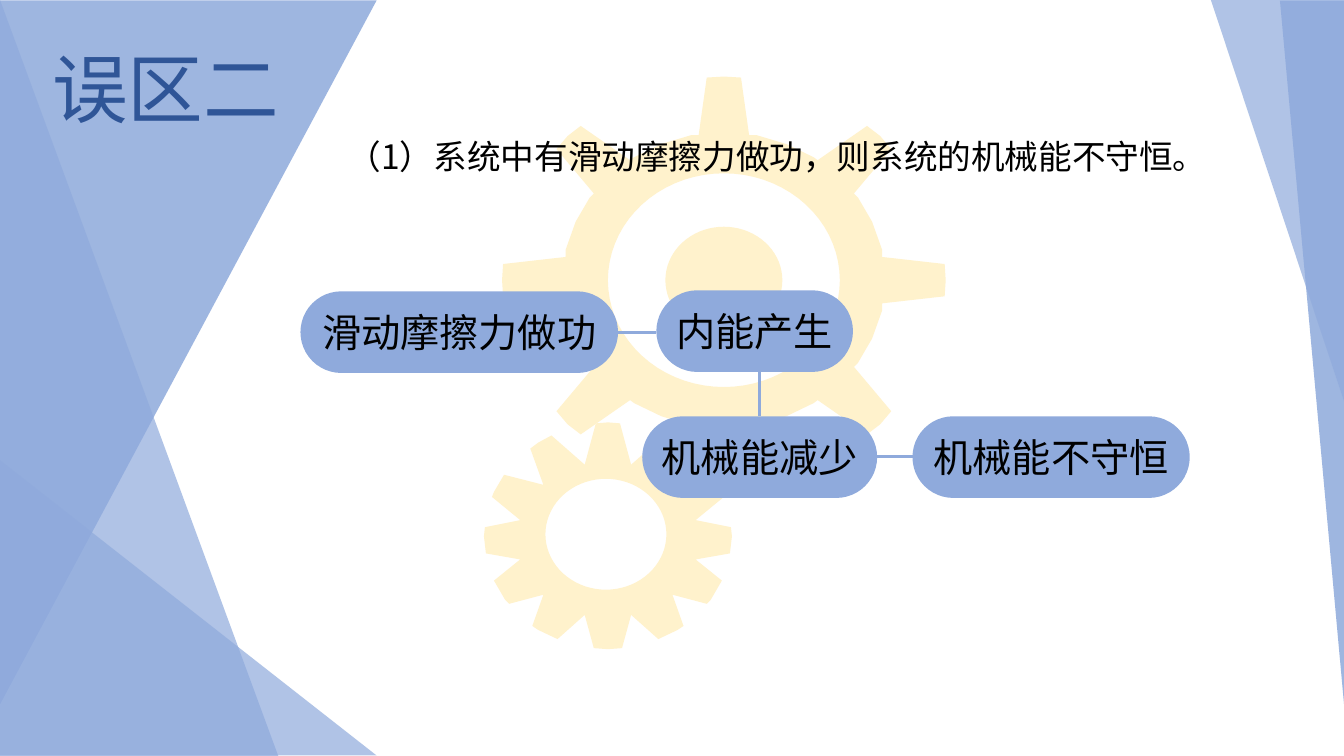
from dataclasses import dataclass
from math import cos, pi, sin

from lxml.etree import SubElement
from pptx import Presentation
from pptx.dml.color import RGBColor
from pptx.enum.shapes import MSO_CONNECTOR, MSO_SHAPE
from pptx.enum.text import MSO_ANCHOR, PP_ALIGN
from pptx.oxml.ns import qn
from pptx.util import Inches, Pt

COLORS = {"gear": "FFF2CC", "blue": "8FAADC", "title": "2F5597", "ink": "000000"}
FONT = "Noto Sans CJK SC"
Point = tuple[float, float]


@dataclass(frozen=True)
class Facet:
    left: float
    top: float
    width: float
    height: float
    rotation: int
    apex: float
    opacity: int


@dataclass(frozen=True)
class Caption:
    text: str
    left: float
    top: float
    width: float
    height: float
    size: int
    color: str
    spacing: float


@dataclass(frozen=True)
class Step:
    text: str
    left: float
    top: float
    width: float


@dataclass(frozen=True)
class Link:
    start: Point
    end: Point


FACETS = [
    Facet(-1.66, 1.64, 7.03, 3.76, 90, 0, 86),
    Facet(-2.37, 2.37, 7.5, 2.76, 90, 1, 70),
    Facet(0.39, 4.15, 2.94, 3.75, 90, 1, 70),
    Facet(9.5, 3.2, 7.03, 0.64, 270, 1, 86),
    Facet(10.68, 1.33, 3.98, 1.32, 270, 1, 70),
]
CAPTIONS = [
    Caption("误区二", 0.42, 0.37, 3.54, 1.01, 54, "title", 1.0),
    Caption("（1）系统中有滑动摩擦力做功，则系统的机械能不守恒。",
            3.35, 1.1, 8.75, 0.64, 24, "ink", 1.5),
]
STEP_HEIGHT = 0.81
STEPS = [
    Step("滑动摩擦力做功", 2.98, 2.89, 3.15),
    Step("内能产生", 6.51, 2.88, 1.95),
    Step("机械能减少", 6.37, 4.13, 2.33),
    Step("机械能不守恒", 9.05, 4.13, 2.75),
]
LINKS = [
    Link((6.11, 3.3), (6.51, 3.3)),
    Link((7.53, 3.69), (7.53, 4.13)),
    Link((8.67, 4.53), (9.06, 4.53)),
]

SMALL_CENTER = (6.03, 5.32)
SMALL_HOLE_CENTER = (6.01, 5.3)
SMALL_HALF = [
    (0, -1.13), (0.12, -1.12), (0.23, -0.71), (0.56, -1), (0.69, -0.93),
    (0.77, -0.87), (0.64, -0.51), (1.03, -0.61), (1.13, -0.44), (1.15, -0.39),
    (0.87, -0.16), (1.22, -0.09), (1.23, 0), (1.21, 0.17), (0.87, 0.23),
    (1.13, 0.44), (1.02, 0.63), (0.98, 0.67), (0.64, 0.58), (0.75, 0.89),
    (0.69, 0.93), (0.5, 1.02), (0.23, 0.78), (0.14, 1.11), (0, 1.12),
]
LARGE_CENTER = (7.18, 2.78)
LARGE_QUARTER = [
    (0, -2.02), (0.17, -2.01), (0.25, -1.44), (0.32, -1.44), (0.62, -1.35),
    (0.89, -1.22), (0.93, -1.19), (1.42, -1.53), (1.55, -1.43), (1.66, -1.3),
    (1.29, -0.86), (1.33, -0.82), (1.47, -0.58), (1.57, -0.3), (1.57, -0.23),
    (2.19, -0.16), (2.2, 0),
]


def mirror_left(half: list[Point]) -> list[Point]:
    return half + [(-x, y) for x, y in half[-2:0:-1]]


def mirror_down(quarter: list[Point]) -> list[Point]:
    return quarter + [(x, -y) for x, y in quarter[-2::-1]]


def place(center: Point, offsets: list[Point]) -> list[Point]:
    return [(center[0] + x, center[1] + y) for x, y in offsets]


def ellipse(center: Point, radius_x: float, radius_y: float) -> list[Point]:
    angles = [2 * pi * step / 72 for step in range(72)]
    return place(center, [(radius_x * cos(a), radius_y * sin(a)) for a in angles])


def paint(shape, color: str) -> None:
    shape.shadow.inherit = False
    shape.fill.solid()
    shape.fill.fore_color.rgb = RGBColor.from_string(COLORS[color])
    shape.line.fill.background()


def add_gear(slide, contours: list[list[Point]]) -> None:
    outlines = [[(Inches(x), Inches(y)) for x, y in contour] for contour in contours]
    builder = slide.shapes.build_freeform(*outlines[0][0])
    builder.add_line_segments(outlines[0][1:], close=True)
    for outline in outlines[1:]:
        builder.move_to(*outline[0])
        builder.add_line_segments(outline[1:], close=True)
    paint(builder.convert_to_shape(), "gear")


def add_facet(slide, facet: Facet) -> None:
    triangle = slide.shapes.add_shape(
        MSO_SHAPE.ISOSCELES_TRIANGLE, Inches(facet.left), Inches(facet.top),
        Inches(facet.width), Inches(facet.height))
    triangle.adjustments[0] = facet.apex
    triangle.rotation = facet.rotation
    paint(triangle, "blue")
    tint = triangle.fill._xPr.find(qn("a:solidFill"))[0]
    SubElement(tint, qn("a:alpha"), val=str(facet.opacity * 1000))


def write(paragraph, text: str, size: int, color: str) -> None:
    run = paragraph.add_run()
    run.text = text
    run.font.size = Pt(size)
    run.font.color.rgb = RGBColor.from_string(COLORS[color])
    run.font.name = FONT
    SubElement(run.font._element, qn("a:ea"), typeface=FONT)


def add_caption(slide, caption: Caption) -> None:
    frame = slide.shapes.add_textbox(
        Inches(caption.left), Inches(caption.top),
        Inches(caption.width), Inches(caption.height)).text_frame
    frame.word_wrap = True
    paragraph = frame.paragraphs[0]
    paragraph.line_spacing = caption.spacing
    write(paragraph, caption.text, caption.size, caption.color)


def add_step(slide, step: Step) -> None:
    pill = slide.shapes.add_shape(
        MSO_SHAPE.ROUNDED_RECTANGLE, Inches(step.left), Inches(step.top),
        Inches(step.width), Inches(STEP_HEIGHT))
    pill.adjustments[0] = 0.5
    paint(pill, "blue")
    frame = pill.text_frame
    frame.word_wrap = False
    frame.vertical_anchor = MSO_ANCHOR.MIDDLE
    paragraph = frame.paragraphs[0]
    paragraph.alignment = PP_ALIGN.CENTER
    write(paragraph, step.text, 28, "ink")


def add_link(slide, link: Link) -> None:
    connector = slide.shapes.add_connector(
        MSO_CONNECTOR.STRAIGHT, *map(Inches, link.start + link.end))
    connector.line.color.rgb = RGBColor.from_string(COLORS["blue"])
    connector.line.width = Pt(2)
    SubElement(connector._element.spPr, qn("a:effectLst"))


def main() -> None:
    deck = Presentation()
    deck.slide_width, deck.slide_height = Inches(13.33), Inches(7.5)
    slide = deck.slides.add_slide(deck.slide_layouts[6])
    add_gear(slide, [place(SMALL_CENTER, mirror_left(SMALL_HALF)),
                     ellipse(SMALL_HOLE_CENTER, 0.6, 0.55)])
    add_gear(slide, [place(LARGE_CENTER, mirror_left(mirror_down(LARGE_QUARTER))),
                     ellipse(LARGE_CENTER, 1.15, 1.06),
                     ellipse(LARGE_CENTER, 0.58, 0.53)])
    for facet in FACETS:
        add_facet(slide, facet)
    for caption in CAPTIONS:
        add_caption(slide, caption)
    for step in STEPS:
        add_step(slide, step)
    for link in LINKS:
        add_link(slide, link)
    deck.save("out.pptx")


if __name__ == "__main__":
    main()
